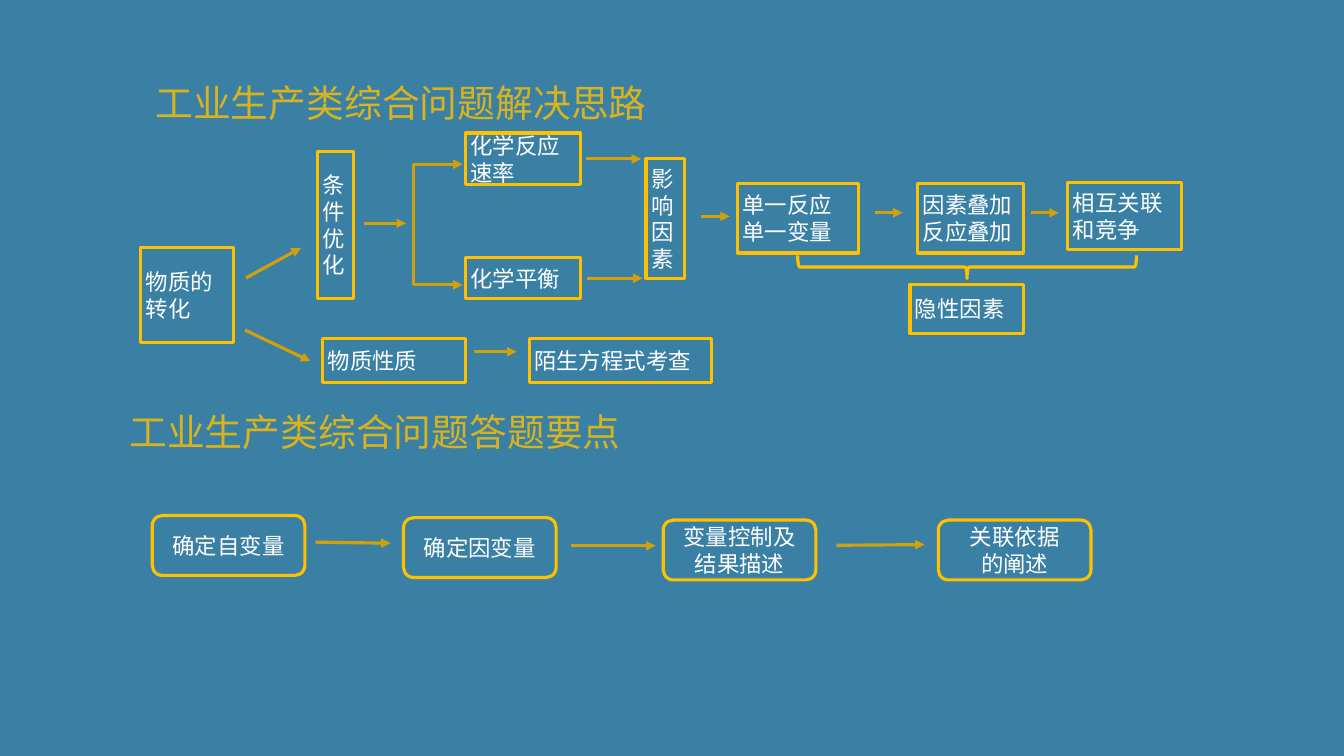
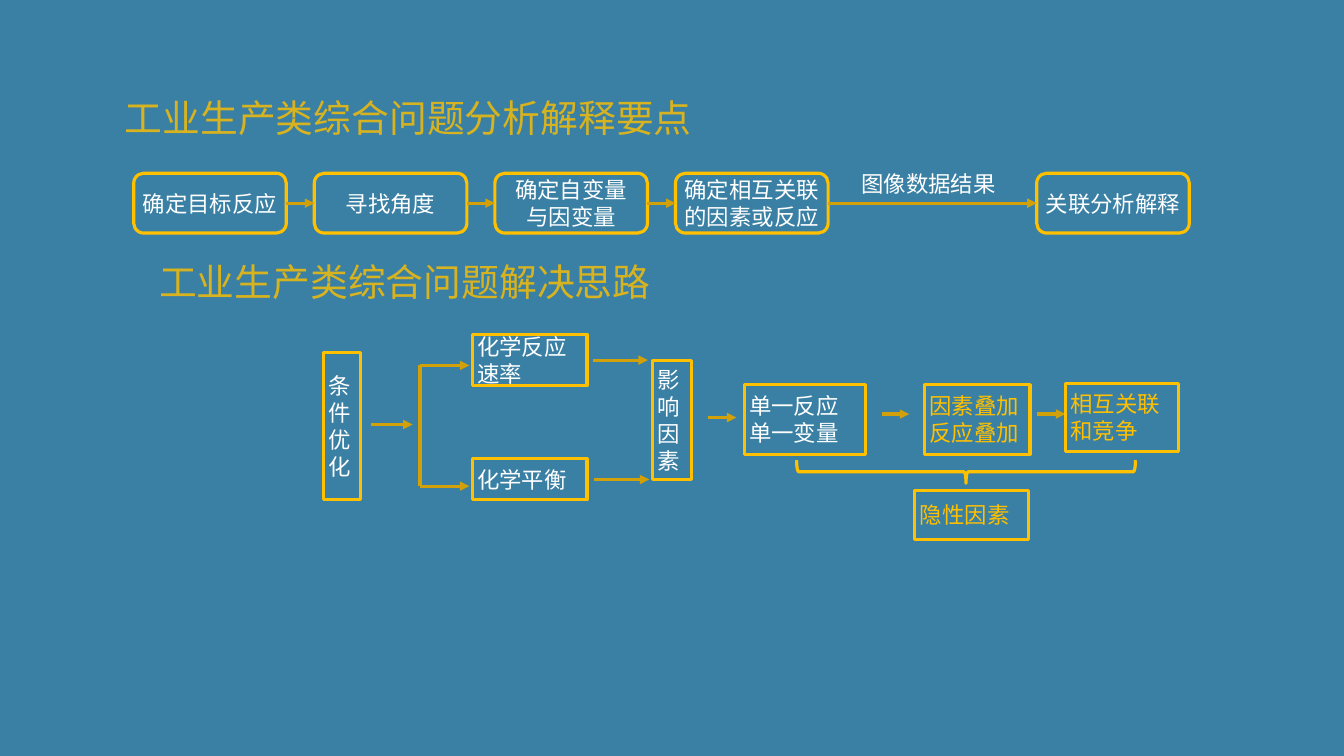
from dataclasses import dataclass
from itertools import pairwise

from lxml import etree
from pptx import Presentation
from pptx import util as u
from pptx.dml.color import RGBColor
from pptx.enum import shapes, text
from pptx.oxml.ns import qn


@dataclass(frozen=True)
class Theme:
    font: str = "Noto Sans CJK SC"
    background: str = "3A80A4"
    gold: str = "FFC000"
    arrow: str = "D2A10A"
    white: str = "FFFFFF"
    title_size: float = 54
    body_size: float = 32
    line_width: float = 4.5
    title_opacity: int = 80


THEME = Theme()
LEFT, CENTER = text.PP_ALIGN.LEFT, text.PP_ALIGN.CENTER
RECT = shapes.MSO_SHAPE.RECTANGLE
ROUNDED = shapes.MSO_SHAPE.ROUNDED_RECTANGLE
BRACE = shapes.MSO_SHAPE.RIGHT_BRACE
STEP_WIDTH, STEP_HEIGHT = 218, 85.5
TITLE_WIDTH, TITLE_HEIGHT = 1106.5, 73.5
HEADING_SOLUTION = "工业生产类综合问题解决思路"


def color(value):
    return RGBColor.from_string(value)


def place(*lengths):
    return [u.Pt(length) for length in lengths]


def write(shape, words, *, size=THEME.body_size, fill=THEME.white,
          align=CENTER, opacity=100, indent=0, inset=7.2):
    frame = shape.text_frame
    frame.word_wrap = True
    frame.vertical_anchor = text.MSO_ANCHOR.MIDDLE
    frame.margin_left = frame.margin_right = u.Pt(inset)
    frame.margin_top = frame.margin_bottom = u.Pt(min(inset, 3.6))
    for index, line in enumerate(words.split("\n")):
        para = frame.add_paragraph() if index else frame.paragraphs[0]
        para.alignment = align
        if indent:
            para._p.get_or_add_pPr().set("marL", str(u.Pt(indent)))
        span = para.add_run()
        span.text = line
        span.font.size = u.Pt(size)
        span.font.color.rgb = color(fill)
        span.font.name = THEME.font
        props = span._r.get_or_add_rPr()
        etree.SubElement(props, qn("a:ea"), typeface=THEME.font)
        if opacity < 100:
            tint = props.find(".//" + qn("a:srgbClr"))
            etree.SubElement(tint, qn("a:alpha"), val=str(opacity * 1000))


def add_title(page, words, left, top, indent=0):
    box = page.shapes.add_textbox(*place(left, top, TITLE_WIDTH, TITLE_HEIGHT))
    write(box, words, size=THEME.title_size, fill=THEME.gold,
          opacity=THEME.title_opacity, indent=indent, inset=4.3)


def add_outline(page, kind, left, top, width, height):
    shape = page.shapes.add_shape(kind, *place(left, top, width, height))
    shape.shadow.inherit = False
    shape.fill.background()
    shape.line.color.rgb = color(THEME.gold)
    shape.line.width = u.Pt(THEME.line_width)
    return shape


def add_box(page, words, left, top, width, height, fill=THEME.white):
    box = add_outline(page, RECT, left, top, width, height)
    write(box, words, align=LEFT, fill=fill)


def add_step(page, words, left, top):
    step = add_outline(page, ROUNDED, left, top, STEP_WIDTH, STEP_HEIGHT)
    write(step, words)
    return step


def add_label(page, words, left, top):
    label = page.shapes.add_textbox(*place(left, top, STEP_WIDTH, STEP_HEIGHT))
    write(label, words)


def add_brace(page, left, top):
    brace = add_outline(page, BRACE, left, top, 33, 484)
    brace.rotation = 90


def add_line(page, x1, y1, x2, y2, head=True):
    line = page.shapes.add_connector(
        shapes.MSO_CONNECTOR.STRAIGHT, *place(x1, y1, x2, y2))
    line.line.color.rgb = color(THEME.arrow)
    line.line.width = u.Pt(THEME.line_width)
    if head:
        etree.SubElement(line.line._get_or_add_ln(), qn("a:tailEnd"), type="triangle")
    etree.SubElement(line._element.spPr, qn("a:effectLst"))
    return line


def join(page, start, end):
    arrow = add_line(page, 0, 0, 0, 0)
    arrow.begin_connect(start, 3)
    arrow.end_connect(end, 1)


def add_factor_flow(page, dx=0, dy=0, late_fill=THEME.white):
    boxes = [
        ("条件优化", 453, 216, 52.5, 210, THEME.white),
        ("化学反应速率", 665, 190, 164, 73.5, THEME.white),
        ("化学平衡", 665, 368, 164, 58.5, THEME.white),
        ("影响因素", 923, 227, 55.5, 170.5, THEME.white),
        ("单一反应单一变量", 1053.5, 262, 173, 99.5, THEME.white),
        ("因素叠加\n反应叠加", 1311, 262, 151, 99.5, late_fill),
    ]
    for words, left, top, width, height, fill in boxes:
        add_box(page, words, left + dx, top + dy, width, height, fill)
    arrows = [
        (520, 319, 580), (590.5, 234.5, 661), (590.5, 407, 661),
        (837, 227, 916), (839, 397.5, 918), (1002, 309, 1042.5),
        (1250, 304, 1289.5), (1472.5, 304, 1512.5),
    ]
    for start, y, end in arrows:
        add_line(page, start + dx, y + dy, end + dx, y + dy)
    add_line(page, 590.5 + dx, 407 + dy, 590.5 + dx, 234.5 + dy, head=False)


def add_hidden_factors(page, rival, hidden, brace, fill=THEME.white):
    add_box(page, "相互关联和竞争", *rival, 162, 96.5, fill)
    add_box(page, "隐性因素", *hidden, 162, 70.5, fill)
    add_brace(page, *brace)


def build_solution_page(page):
    add_title(page, HEADING_SOLUTION, 19.5, 110)
    add_box(page, "物质的转化", 201, 354, 132, 135.5)
    add_box(page, "物质性质", 461, 484, 204.5, 62)
    add_box(page, "陌生方程式考查", 756, 484, 260.5, 62)
    add_line(page, 351.5, 397, 430, 354)
    add_line(page, 350, 471.5, 443.5, 516)
    add_line(page, 677.5, 502.5, 738, 502.5)
    add_factor_flow(page)
    add_hidden_factors(page, (1525.5, 260.5), (1300, 406), (1365, 139.5))

    add_title(page, "工业生产类综合问题答题要点", -47.5, 579.5, indent=60)
    steps = [
        ("确定自变量", 217.5, 736.5), ("确定因变量", 576.5, 739.5),
        ("变量控制及\n结果描述", 947.5, 743), ("关联依据\n的阐述", 1340.5, 743),
    ]
    for step in steps:
        add_step(page, *step)
    add_line(page, 450.5, 774.5, 558, 776)
    add_line(page, 816, 779.5, 936.5, 779.5)
    add_line(page, 1195, 779, 1321, 778)


def build_analysis_page(page):
    add_title(page, "工业生产类综合问题分析解释要点", 0, 131, indent=60)
    left, top, pitch = 191, 247.5, 258
    columns = {
        0: "确定目标反应", 1: "寻找角度", 2: "确定自变量\n与因变量",
        3: "确定相互关联的因素或反应", 5: "关联分析解释",
    }
    steps = [add_step(page, words, left + column * pitch, top)
             for column, words in columns.items()]
    for start, end in pairwise(steps):
        join(page, start, end)
    add_label(page, "图像数据结果", 1217.5, 219.5)

    add_title(page, HEADING_SOLUTION, 25, 365)
    add_factor_flow(page, 9.5, 287.5, THEME.gold)
    add_hidden_factors(page, (1522, 548), (1307, 700.5), (1363.5, 432), THEME.gold)


def main():
    deck = Presentation()
    deck.slide_width, deck.slide_height = place(1920, 1080)
    for build in (build_solution_page, build_analysis_page):
        page = deck.slides.add_slide(deck.slide_layouts[6])
        page.background.fill.solid()
        page.background.fill.fore_color.rgb = color(THEME.background)
        build(page)
    deck.save("out.pptx")


if __name__ == "__main__":
    main()
